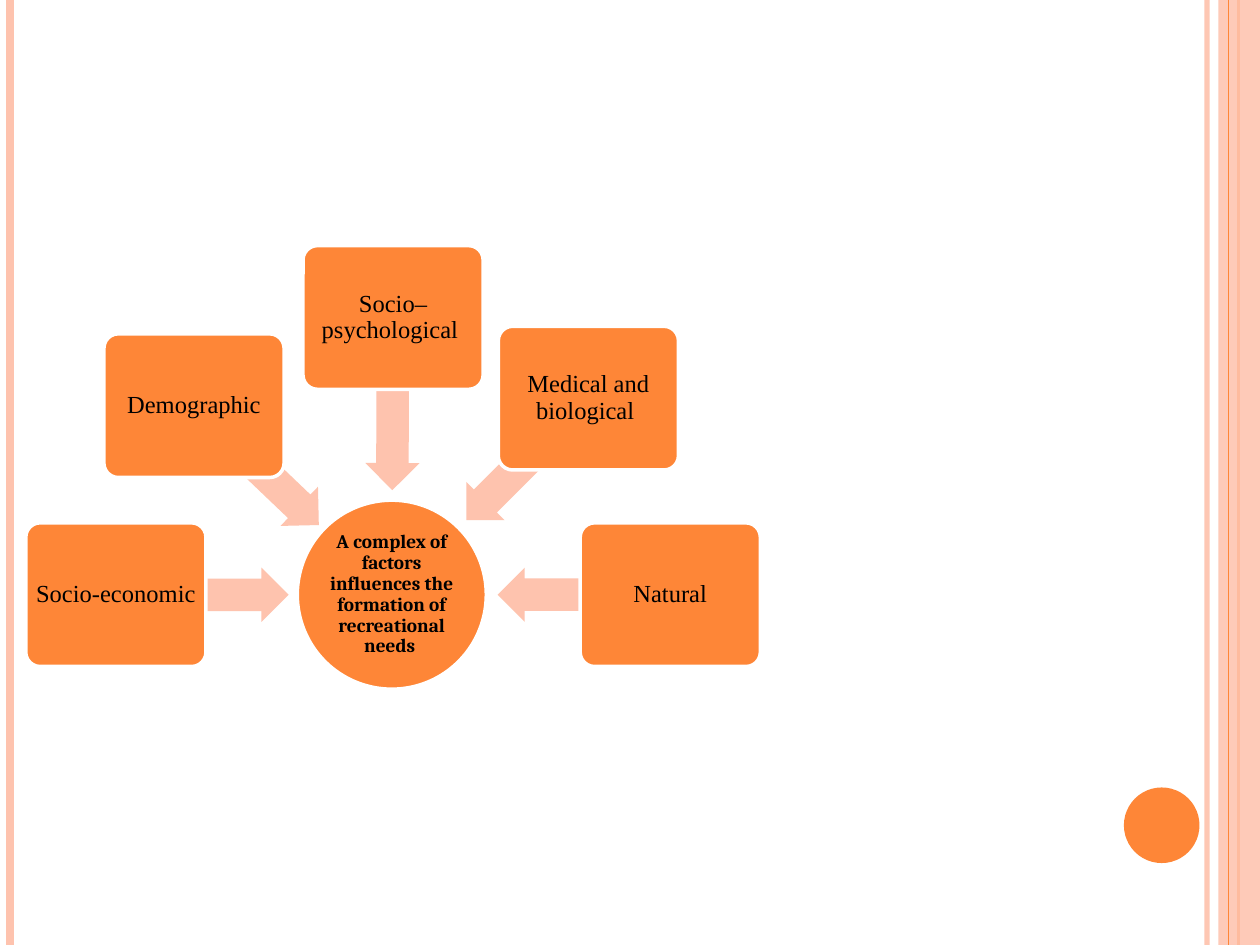
from math import atan2, cos, degrees, hypot, radians, sin

from lxml.etree import SubElement
from pptx import Presentation
from pptx.dml.color import RGBColor
from pptx.enum.shapes import MSO_CONNECTOR, MSO_SHAPE
from pptx.enum.text import MSO_ANCHOR, PP_ALIGN
from pptx.oxml.ns import qn
from pptx.util import Inches, Pt

# Content: factor and the centre of its box
HUB_TEXT = "A complex of factors influences the formation of recreational needs "
FACTORS = [
    ("Socio-economic", 0.92, 4.72),
    ("Demographic", 1.54, 3.22),
    ("Socio–psychological ", 3.12, 2.52),
    ("Medical and biological ", 4.67, 3.16),
    ("Natural", 5.32, 4.72),
]

THEME = {
    "accent": RGBColor(0xFE, 0x86, 0x37),
    "tint": RGBColor(0xFE, 0xC3, 0xAE),
    "white": RGBColor(0xFF, 0xFF, 0xFF),
    "text": RGBColor(0, 0, 0),
    "hub_font": ("Cambria", 11, True),
    "box_font": ("Times New Roman", 14, False),
    "outline": 2,
}

# Layout in inches
SLIDE_WIDTH, SLIDE_HEIGHT = 10, 7.5
HUB_X, HUB_Y, HUB_SIZE = 3.11, 4.72, 1.5
BOX_WIDTH, BOX_HEIGHT = 1.4, 1.12
BOX_WIDTH, BOX_HEIGHT = 1.43, 1.14
ARROW_LENGTH, ARROW_HEIGHT = 1.37, 0.43


def set_alpha(fill_parent, percent):
    color = next(fill_parent.iter(qn("a:srgbClr")))
    SubElement(color, qn("a:alpha")).set("val", str(percent * 1000))


def add_rule(slide, x, color, width):
    rule = slide.shapes.add_connector(
        MSO_CONNECTOR.STRAIGHT, Inches(x), 0, Inches(x), Inches(SLIDE_HEIGHT))
    rule.line.color.rgb = color
    rule.line.width = Pt(width)
    SubElement(rule._element.spPr, qn("a:effectLst"))
    return rule


def add_centred(slide, kind, x, y, width, height, color, outlined=False):
    shape = slide.shapes.add_shape(
        kind, Inches(x - width / 2), Inches(y - height / 2),
        Inches(width), Inches(height))
    shape.shadow.inherit = False
    shape.fill.solid()
    shape.fill.fore_color.rgb = color
    if outlined:
        shape.line.color.rgb = THEME["white"]
        shape.line.width = Pt(THEME["outline"])
    else:
        shape.line.fill.background()
    return shape


def write_label(shape, text, font_style, inset):
    frame = shape.text_frame
    frame.text = text
    frame.word_wrap = True
    frame.vertical_anchor = MSO_ANCHOR.MIDDLE
    frame.margin_left = frame.margin_right = Inches(inset)
    frame.margin_top = frame.margin_bottom = Inches(inset)
    paragraph = frame.paragraphs[0]
    paragraph.alignment = PP_ALIGN.CENTER
    paragraph.line_spacing = 0.9
    font = paragraph.runs[0].font
    name, size, font.bold = font_style
    font.name, font.size = name, Pt(size)
    font.color.rgb = THEME["text"]


def add_frame(slide):
    """Vertical rules, side band and the round page marker."""
    rule = add_rule(slide, 9.58, THEME["tint"], 3)
    set_alpha(rule._element.spPr, 93)
    add_rule(slide, 0.08, THEME["tint"], 4.5)
    add_rule(slide, 9.83, THEME["accent"], 1.5)
    band = add_centred(slide, MSO_SHAPE.RECTANGLE, 9.835, SLIDE_HEIGHT / 2,
                       0.33, SLIDE_HEIGHT, THEME["tint"])
    set_alpha(band._element.spPr, 87)
    add_rule(slide, 9.75, THEME["accent"], 0.75)
    add_centred(slide, MSO_SHAPE.OVAL, 9.22, 6.55, 0.6, 0.6, THEME["accent"])


def add_factor(slide, text, x, y):
    """Box with an arrow that starts at its centre and points to the hub."""
    angle = degrees(atan2(y - HUB_Y, x - HUB_X))
    arrow = add_centred(
        slide, MSO_SHAPE.LEFT_ARROW,
        x - ARROW_LENGTH / 2 * cos(radians(angle)),
        y - ARROW_LENGTH / 2 * sin(radians(angle)),
        ARROW_LENGTH, ARROW_HEIGHT, THEME["tint"])
    arrow.adjustments[0], arrow.adjustments[1] = 0.6, 0.5
    arrow.rotation = angle % 360

    box = add_centred(slide, MSO_SHAPE.ROUNDED_RECTANGLE, x, y,
                      BOX_WIDTH, BOX_HEIGHT, THEME["accent"], outlined=True)
    box.adjustments[0] = 0.1
    write_label(box, text, THEME["box_font"], 0.03)


def main():
    presentation = Presentation()
    presentation.slide_width = Inches(SLIDE_WIDTH)
    presentation.slide_height = Inches(SLIDE_HEIGHT)
    slide = presentation.slides.add_slide(presentation.slide_layouts[6])

    add_frame(slide)
    hub = add_centred(slide, MSO_SHAPE.OVAL, HUB_X, HUB_Y,
                      HUB_SIZE, HUB_SIZE, THEME["accent"], outlined=True)
    write_label(hub, HUB_TEXT, THEME["hub_font"], 0.01)
    for factor in FACTORS:
        add_factor(slide, *factor)

    presentation.save("out.pptx")


if __name__ == "__main__":
    main()
